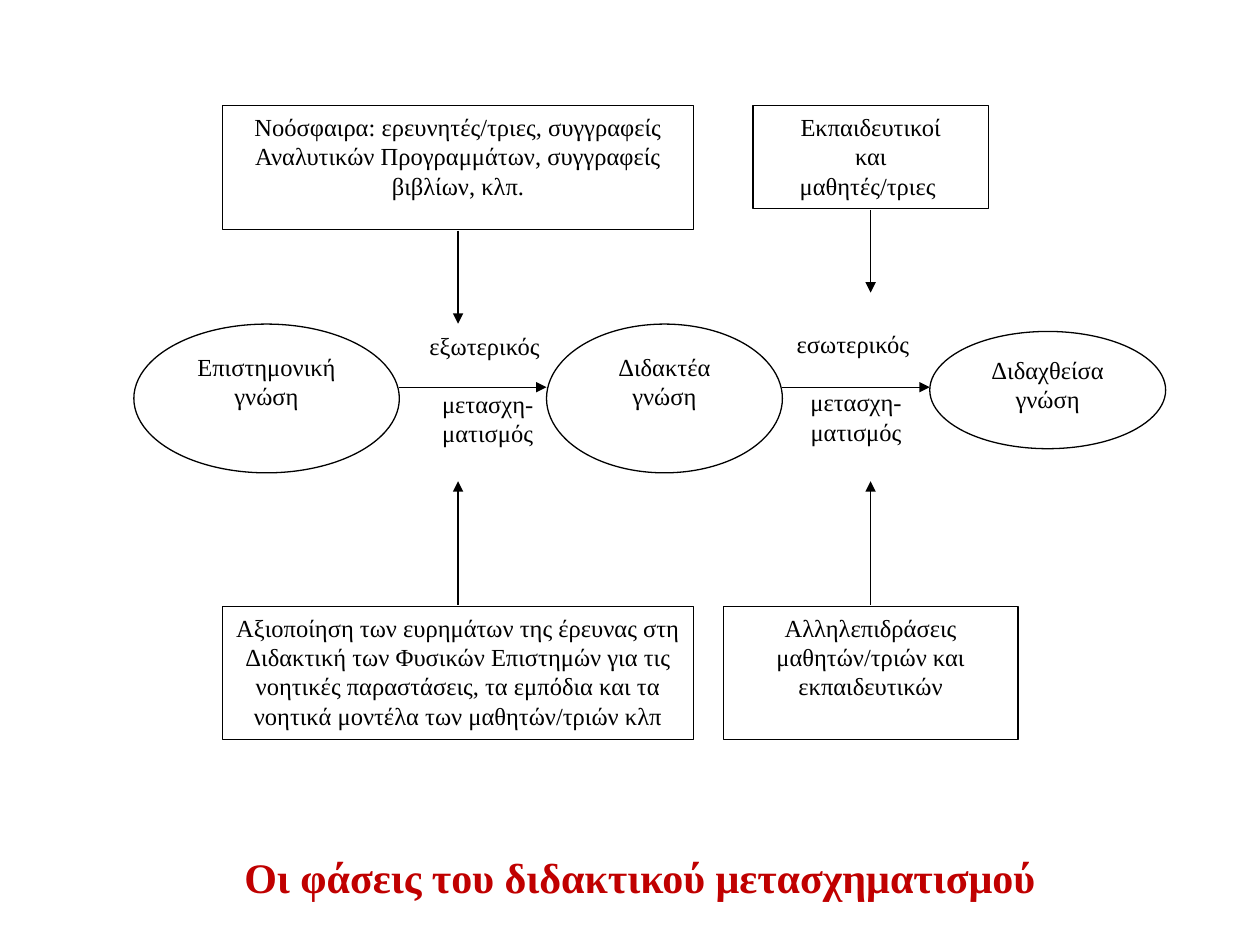
import dataclasses
import typing

import lxml.etree
import pptx
import pptx.dml.color
import pptx.enum.shapes
import pptx.enum.text
import pptx.oxml.ns
import pptx.util

Pt = pptx.util.Pt
Shapes = pptx.enum.shapes.MSO_SHAPE
Anchor = pptx.enum.text.MSO_ANCHOR

BLACK = pptx.dml.color.RGBColor(0x00, 0x00, 0x00)
WHITE = pptx.dml.color.RGBColor(0xFF, 0xFF, 0xFF)
RED = pptx.dml.color.RGBColor(0xC0, 0x00, 0x00)

FONT = "Times New Roman"
LINE_GAP = 16.5
BODY_FONT = {"name": FONT, "size": Pt(14), "bold": False}
TITLE_FONT = {"name": FONT, "size": Pt(24), "bold": True}
BODY_FRAME = {"word_wrap": True, "vertical_anchor": Anchor.TOP}
TITLE_FRAME = {
    "word_wrap": True,
    "vertical_anchor": Anchor.MIDDLE,
    "margin_top": Pt(33),
    "auto_size": pptx.enum.text.MSO_AUTO_SIZE.NONE,
}


@dataclasses.dataclass(frozen=True)
class Area:
    left: float
    top: float
    width: float
    height: float

    def lengths(self) -> list[int]:
        return [Pt(value) for value in dataclasses.astuple(self)]


@dataclasses.dataclass(frozen=True)
class Node:
    kind: Shapes
    area: Area
    lines: tuple[str, ...]


@dataclasses.dataclass(frozen=True)
class Label:
    area: Area
    lines: tuple[str, ...]


@dataclasses.dataclass(frozen=True)
class Arrow:
    start: tuple[float, float]
    end: tuple[float, float]


NODES = (
    Node(Shapes.OVAL, Area(76.5, 185.2, 151.7, 85), ("Επιστημονική γνώση",)),
    Node(Shapes.OVAL, Area(312.3, 185.2, 134.8, 85), ("Διδακτέα γνώση",)),
    Node(Shapes.OVAL, Area(531.3, 189.4, 134.8, 67), ("Διδαχθείσα γνώση",)),
    Node(Shapes.RECTANGLE, Area(127, 60.3, 269.5, 70.8), (
        "Νοόσφαιρα: ερευνητές/τριες, συγγραφείς Αναλυτικών Προγραμμάτων, "
        "συγγραφείς βιβλίων, κλπ.",)),
    Node(Shapes.RECTANGLE, Area(430.2, 60.3, 134.8, 59),
         ("Εκπαιδευτικοί", "και", "μαθητές/τριες ")),
    Node(Shapes.RECTANGLE, Area(127, 346.5, 269.5, 76), (
        "Αξιοποίηση των ευρημάτων της έρευνας στη Διδακτική των Φυσικών "
        "Επιστημών για τις νοητικές παραστάσεις, τα εμπόδια και τα νοητικά "
        "μοντέλα των μαθητών/τριών κλπ",)),
    Node(Shapes.RECTANGLE, Area(413.3, 346.5, 168.5, 76),
         ("Αλληλεπιδράσεις μαθητών/τριών και εκπαιδευτικών",)),
)
LABELS = (
    Label(Area(228.2, 185.5, 101, 88.5), ("εξωτερικός ", "μετασχη-ματισμός")),
    Label(Area(447.1, 184.6, 84.2, 125), ("εσωτερικός ", "μετασχη-ματισμός")),
)
ARROWS = (
    Arrow((261.8, 131.8), (261.8, 185)),
    Arrow((261.8, 345.6), (261.8, 275)),
    Arrow((497.5, 120), (497.5, 167.2)),
    Arrow((497.5, 345.6), (497.5, 275)),
    Arrow((228.2, 221.3), (312.3, 221.3)),
    Arrow((447.1, 221.3), (531.3, 221.3)),
)


def apply(target: typing.Any, values: dict[str, typing.Any]) -> None:
    for name, value in values.items():
        setattr(target, name, value)


def write(
    box: typing.Any,
    lines: tuple[str, ...],
    frame_format: dict[str, typing.Any],
    font_format: dict[str, typing.Any],
    color: pptx.dml.color.RGBColor,
    gap: float = 0,
) -> None:
    frame = box.text_frame
    apply(frame, frame_format)
    for index, line in enumerate(lines):
        para = frame.add_paragraph() if index else frame.paragraphs[0]
        para.alignment = pptx.enum.text.PP_ALIGN.CENTER
        para.space_before = Pt(gap if index else 0)
        span = para.add_run()
        span.text = line
        apply(span.font, font_format)
        span.font.color.rgb = color


def draw_node(page: typing.Any, node: Node) -> None:
    box = page.shapes.add_shape(node.kind, *node.area.lengths())
    box.shadow.inherit = False
    box.fill.solid()
    box.fill.fore_color.rgb = WHITE
    box.line.color.rgb = BLACK
    box.line.width = Pt(0.75)
    write(box, node.lines, BODY_FRAME, BODY_FONT, BLACK)


def draw_label(page: typing.Any, label: Label) -> None:
    box = page.shapes.add_textbox(*label.area.lengths())
    write(box, label.lines, BODY_FRAME, BODY_FONT, BLACK, LINE_GAP)


def draw_arrow(page: typing.Any, arrow: Arrow) -> None:
    ends = [Pt(value) for value in arrow.start + arrow.end]
    connector = page.shapes.add_connector(
        pptx.enum.shapes.MSO_CONNECTOR.STRAIGHT, *ends)
    connector.line.color.rgb = BLACK
    connector.line.width = Pt(0.75)
    qn = pptx.oxml.ns.qn
    properties = connector.element.spPr
    lxml.etree.SubElement(
        properties.find(qn("a:ln")), qn("a:tailEnd"), type="triangle")
    lxml.etree.SubElement(properties, qn("a:effectLst"))


def draw_title(page: typing.Any, area: Area, text: str) -> None:
    title = page.shapes.title
    apply(title, dict(zip(("left", "top", "width", "height"), area.lengths())))
    write(title, (text,), TITLE_FRAME, TITLE_FONT, RED)


def main() -> None:
    deck = pptx.Presentation()
    apply(deck, {"slide_width": Pt(720), "slide_height": Pt(540)})
    page = deck.slides.add_slide(deck.slide_layouts.get_by_name("Title Only"))
    for node in NODES:
        draw_node(page, node)
    for label in LABELS:
        draw_label(page, label)
    for arrow in ARROWS:
        draw_arrow(page, arrow)
    draw_title(page, Area(42.5, 433.5, 646.5, 105),
               "Οι φάσεις του διδακτικού μετασχηματισμού")
    deck.save("out.pptx")


if __name__ == "__main__":
    main()
